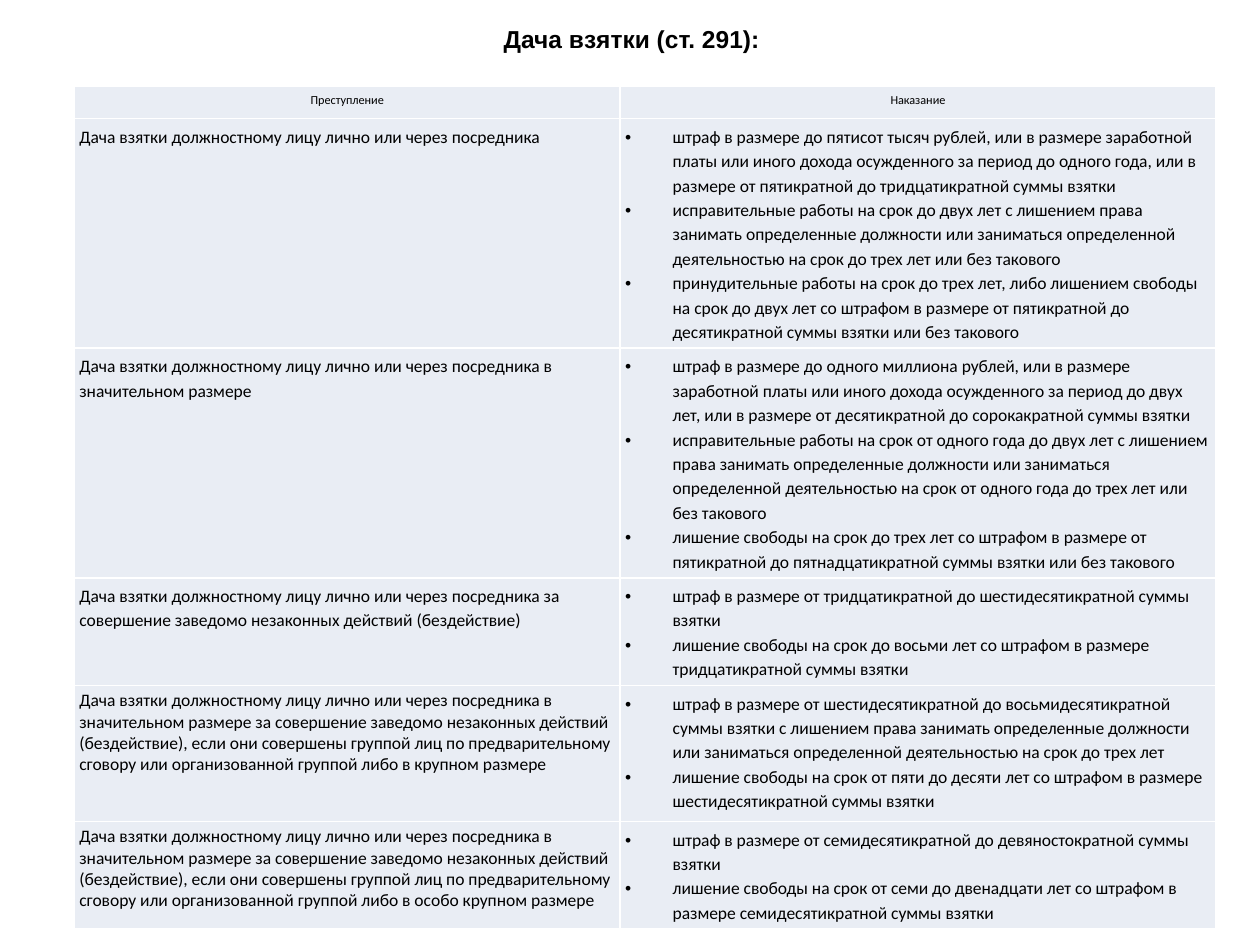
from lxml.etree import SubElement
from pptx import Presentation
from pptx.dml.color import RGBColor
from pptx.enum.text import MSO_ANCHOR, PP_ALIGN
from pptx.oxml.ns import qn
from pptx.util import Cm, Pt

THEME = {
    "text": RGBColor.from_string("000000"),
    "cell": RGBColor.from_string("E9EDF4"),
    "border": "FFFFFF",
    "title_font": "Arial",
    "table_font": "Calibri",
    "title_size": Pt(14),
    "header_size": Pt(7),
    "body_size": Pt(10),
}

# Paragraph formats
HEADER = {"alignment": PP_ALIGN.CENTER, "line_spacing": 1.15, "space_after": Pt(10)}
SPACED = {"line_spacing": 1.15, "space_after": Pt(10)}
PLAIN = {}
BULLET = {"line_spacing": 1.15}

# Rows: height in cm, format of the offence, offence, penalties
OFFENCES = [
    (4.62, SPACED, "Дача взятки должностному лицу лично или через посредника", [
        "штраф в размере до пятисот тысяч рублей, или в размере заработной платы или иного дохода "
        "осужденного за период до одного года, или в размере от пятикратной до тридцатикратной "
        "суммы взятки",
        "исправительные работы на срок до двух лет с лишением права занимать определенные должности "
        "или заниматься определенной деятельностью на срок до трех лет или без такового",
        "принудительные работы на срок до трех лет, либо лишением свободы на срок до двух лет со "
        "штрафом в размере от пятикратной до десятикратной суммы взятки или без такового",
    ]),
    (4.62, SPACED, "Дача взятки должностному лицу лично или через посредника в значительном размере", [
        "штраф в размере до одного миллиона рублей, или в размере заработной платы или иного дохода "
        "осужденного за период до двух лет, или в размере от десятикратной до сорокакратной "
        "суммы взятки",
        "исправительные работы на срок от одного года до двух лет с лишением права занимать "
        "определенные должности или заниматься определенной деятельностью на срок от одного года "
        "до трех лет или без такового",
        "лишение свободы на срок до трех лет со штрафом в размере от пятикратной до "
        "пятнадцатикратной суммы взятки или без такового",
    ]),
    (2.16, SPACED, "Дача взятки должностному лицу лично или через посредника за совершение заведомо "
     "незаконных действий (бездействие)", [
        "штраф в размере от тридцатикратной до шестидесятикратной суммы взятки",
        "лишение свободы на срок до восьми лет со штрафом в размере тридцатикратной суммы взятки",
     ]),
    (2.74, PLAIN, "Дача взятки должностному лицу лично или через посредника в значительном размере за "
     "совершение заведомо незаконных действий (бездействие), если они совершены группой лиц по "
     "предварительному сговору или организованной группой либо в крупном размере", [
        "штраф в размере от шестидесятикратной до восьмидесятикратной суммы взятки с лишением права "
        "занимать определенные должности или заниматься определенной деятельностью на срок до трех лет",
        "лишение свободы на срок от пяти до десяти лет со штрафом в размере шестидесятикратной "
        "суммы взятки",
     ]),
    (2.16, PLAIN, "Дача взятки должностному лицу лично или через посредника в значительном размере за "
     "совершение заведомо незаконных действий (бездействие), если они совершены группой лиц по "
     "предварительному сговору или организованной группой либо в особо крупном размере", [
        "штраф в размере от семидесятикратной до девяностократной суммы взятки",
        "лишение свободы на срок от семи до двенадцати лет со штрафом в размере "
        "семидесятикратной суммы взятки",
     ]),
]


def write_para(para, text, para_format, font_format):
    for name, value in para_format.items():
        setattr(para, name, value)
    span = para.add_run()
    span.text = text
    for name, value in font_format.items():
        setattr(span.font, name, value)
    span.font.color.rgb = THEME["text"]


def fill_cell(cell, texts, para_format, size):
    for side in ("left", "right", "top", "bottom"):
        setattr(cell, f"margin_{side}", Cm(0.1))
    # Borders come before the fill in the cell properties
    properties = cell._tc.get_or_add_tcPr()
    for tag in ("a:lnL", "a:lnR", "a:lnT", "a:lnB"):
        line = SubElement(properties, qn(tag), w=str(Pt(1)))
        SubElement(SubElement(line, qn("a:solidFill")), qn("a:srgbClr"), val=THEME["border"])
    cell.fill.solid()
    cell.fill.fore_color.rgb = THEME["cell"]
    frame = cell.text_frame
    for index, text in enumerate(texts):
        para = frame.add_paragraph() if index else frame.paragraphs[0]
        write_para(para, text, para_format, {"name": THEME["table_font"], "size": size})
        if para_format is BULLET:
            bullet = para._p.get_or_add_pPr()
            bullet.set("marL", str(Cm(0.96)))
            bullet.set("indent", str(-Cm(0.96)))
            SubElement(bullet, qn("a:buFont"), typeface="Arial")
            SubElement(bullet, qn("a:buChar"), char="•")


deck = Presentation()
deck.slide_width, deck.slide_height = Cm(25.4), Cm(19.05)
page = deck.slides.add_slide(deck.slide_layouts[6])

# Table of offences and penalties
table = page.shapes.add_table(
    len(OFFENCES) + 1, 2, Cm(1.5), Cm(1.73), Cm(23.01), Cm(16.96)).table
table.first_row = False
table.horz_banding = False
table.columns[0].width, table.columns[1].width = Cm(11), Cm(12.01)

# Header row
table.rows[0].height = Cm(0.66)
for column, heading in enumerate(("Преступление", "Наказание")):
    fill_cell(table.cell(0, column), [heading], HEADER, THEME["header_size"])

# Body rows
for row, (height, offence_format, offence, penalties) in enumerate(OFFENCES, 1):
    table.rows[row].height = Cm(height)
    fill_cell(table.cell(row, 0), [offence], offence_format, THEME["body_size"])
    fill_cell(table.cell(row, 1), penalties, BULLET, THEME["body_size"])

# Title
box = page.shapes.add_textbox(Cm(4.9), Cm(0.36), Cm(15.67), Cm(1.63))
box.text_frame.word_wrap = True
box.text_frame.vertical_anchor = MSO_ANCHOR.TOP
write_para(box.text_frame.paragraphs[0], "Дача взятки (ст. 291):", {"alignment": PP_ALIGN.CENTER},
           {"name": THEME["title_font"], "size": THEME["title_size"], "bold": True})

deck.save("out.pptx")
